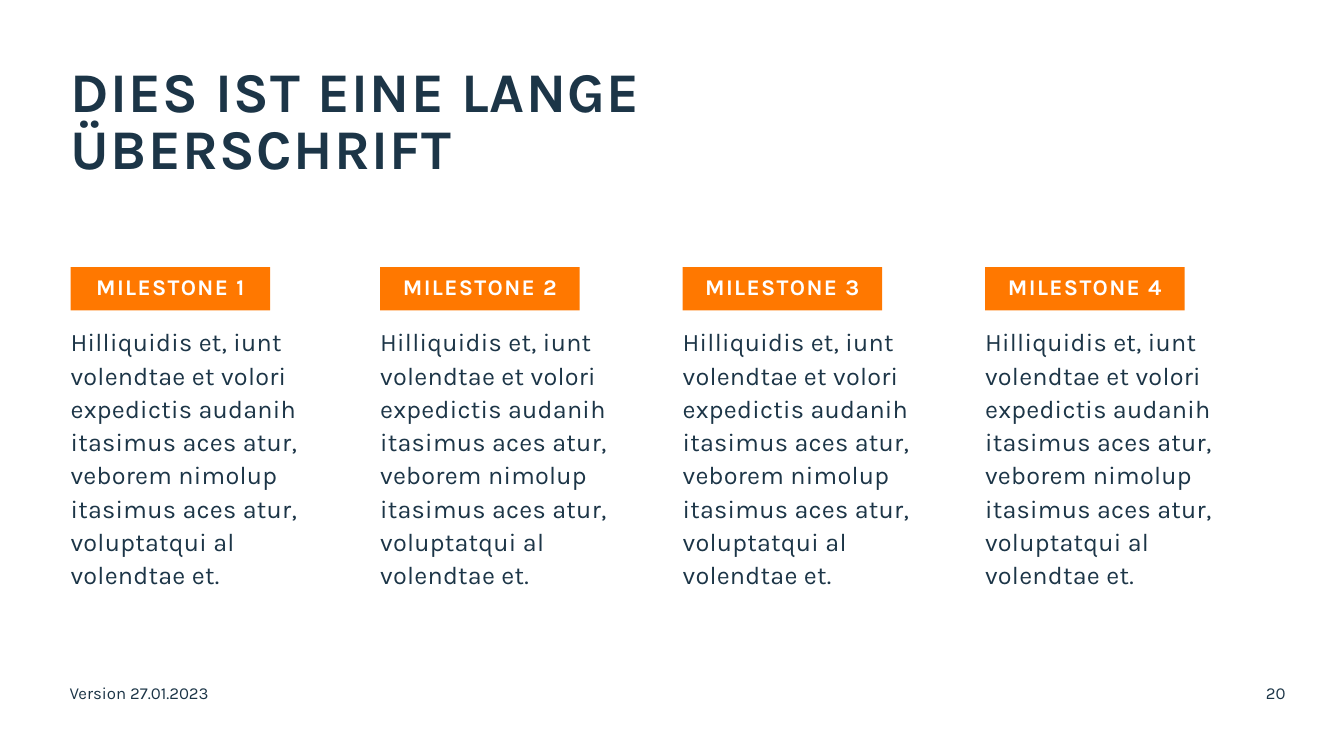
from dataclasses import dataclass

from pptx import Presentation
from pptx.dml.color import RGBColor
from pptx.enum.shapes import MSO_SHAPE as Shape
from pptx.enum.text import MSO_ANCHOR as Anchor, MSO_AUTO_SIZE as AutoSize, PP_ALIGN as Align
from pptx.util import Inches, Pt


@dataclass(frozen=True)
class Theme:
    font: str = "Karla"
    navy: RGBColor = RGBColor(0x1C, 0x35, 0x47)
    orange: RGBColor = RGBColor(0xFF, 0x78, 0x00)
    white: RGBColor = RGBColor(0xFF, 0xFF, 0xFF)
    title_size: int = 40
    label_size: int = 16
    body_size: int = 18
    footer_size: int = 12


theme = Theme()


def write(box, text, size, color=theme.navy, bold=False, tracking=0.0,
          line_spacing=1.0, align=Align.LEFT, anchor=Anchor.TOP):
    """Fill a box with one styled run; tracking is letter spacing in points."""
    frame = box.text_frame
    frame.word_wrap = True
    frame.auto_size = AutoSize.NONE
    frame.vertical_anchor = anchor
    frame.margin_left = frame.margin_right = 0
    frame.margin_top = frame.margin_bottom = 0
    para = frame.paragraphs[0]
    para.alignment = align
    para.line_spacing = line_spacing
    span = para.add_run()
    span.text = text
    span.font.name = theme.font
    span.font.size = Pt(size)
    span.font.bold = bold
    span.font.color.rgb = color
    if tracking:
        span._r.get_or_add_rPr().set("spc", str(round(tracking * 100)))


def place(left, top, width, height):
    return [Inches(value) for value in (left, top, width, height)]


deck = Presentation()
deck.slide_width, deck.slide_height = Inches(13.33), Inches(7.5)
page = deck.slides.add_slide(deck.slide_layouts.get_by_name("Title Only"))
page.background.fill.solid()
page.background.fill.fore_color.rgb = theme.white

# Title
title = page.shapes.title
title.left, title.top, title.width, title.height = place(0.7, 0.66, 8.2, 1.12)
write(title, "DIES IST EINE LANGE ÜBERSCHRIFT", theme.title_size,
      bold=True, tracking=1, line_spacing=0.85)

# Milestone columns
description = (
    "Hilliquidis et, iunt volendtae et volori expedictis audanih "
    "itasimus aces atur, veborem nimolup itasimus aces atur, "
    "voluptatqui al volendtae et."
)
for number, left in enumerate((0.7, 3.77, 6.77, 9.77), start=1):
    label = page.shapes.add_shape(Shape.RECTANGLE, *place(left, 2.65, 1.98, 0.43))
    label.shadow.inherit = False
    label.fill.solid()
    label.fill.fore_color.rgb = theme.orange
    label.line.fill.background()
    write(label, f"MILESTONE {number}", theme.label_size, theme.white, bold=True,
          tracking=1, line_spacing=0.85, align=Align.CENTER, anchor=Anchor.MIDDLE)

    body = page.shapes.add_textbox(*place(left, 3.21, 2.41, 3.09))
    write(body, description, theme.body_size, tracking=0.2, line_spacing=1.1)

# Footer
version = page.shapes.add_textbox(*place(0.69, 6.77, 8.23, 0.4))
write(version, "Version 27.01.2023", theme.footer_size)
page_number = page.shapes.add_textbox(*place(10.6, 6.77, 2.15, 0.4))
write(page_number, "20", theme.footer_size, align=Align.RIGHT)

deck.save("out.pptx")
